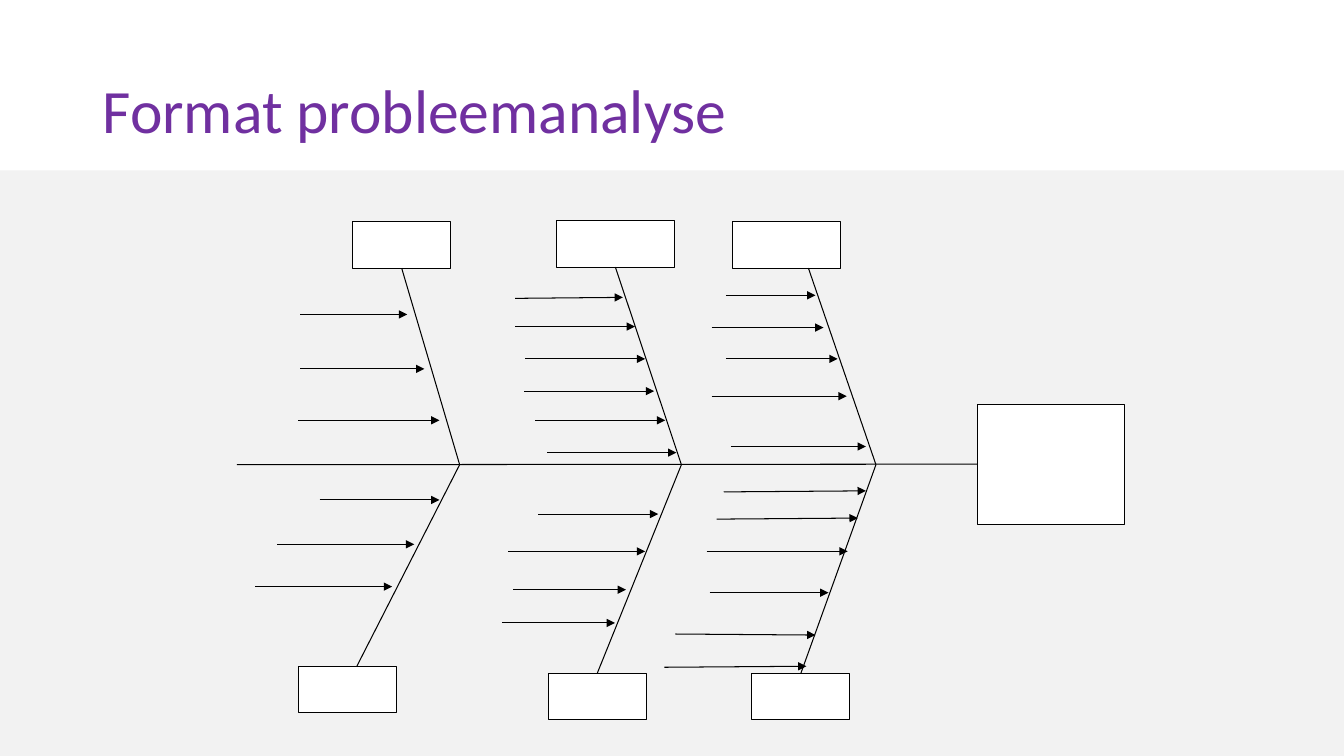
from dataclasses import dataclass

from lxml import etree
from pptx import Presentation
from pptx import util as u
from pptx.dml.color import RGBColor
from pptx.enum import shapes, text
from pptx.oxml.ns import qn


@dataclass(frozen=True)
class Theme:
    title: str = "7030A0"
    panel: str = "F2F2F2"
    box: str = "FFFFFF"
    line: str = "000000"
    font: str = "Calibri"
    title_size: int = 44
    line_width: float = 0.75


THEME = Theme()
CELL = 0.1  # inches per grid column and row
COLUMNS, ROWS = 133.33, 75
TOP, BOTTOM = 0, 2  # connection sites of a rectangle
LEFT = 1

# Fishbone, in grid cells from the diagram's corner
SPINE_ROW = 24.2
EFFECT = (73.5, 18.2, 14.6, 11.9)
CAUSE_HEIGHT = 4.6

# Each cause: box (column, row, width), column where the bone leaves the box
# (None for its middle), column where it meets the spine, and the arrows
# (start column, start row, end column, end row)
CAUSES = [
    ((11.5, 0.1, 9.7), None, 22.1,
     [(6.3, 9.3, 16.9, 9.3), (6.3, 14.7, 18.6, 14.7), (6.1, 19.8, 20.1, 19.8)]),
    ((31.7, 0, 11.7), None, 44.1,
     [(27.6, 7.7, 38.3, 7.6), (27.6, 10.5, 39.5, 10.5), (28.6, 13.7, 40.5, 13.7),
      (28.5, 16.9, 41.4, 16.9), (29.6, 19.8, 42.5, 19.8), (30.8, 23, 43.6, 23)]),
    ((49.2, 0.1, 10.7), 56.7, 63.4,
     [(48.5, 7.4, 57.4, 7.4), (47.1, 10.6, 58.2, 10.6), (48.5, 13.7, 59.6, 13.7),
      (47.1, 17.4, 60.5, 17.4), (49, 22.4, 62.4, 22.4)]),
    ((6.1, 44.2, 9.7), 11.9, 22.1,
     [(8.2, 27.7, 20.1, 27.7), (4, 32.1, 17.6, 32.1), (1.8, 36.3, 15.4, 36.3)]),
    ((30.9, 44.9, 9.7), None, 44.1,
     [(29.9, 29.1, 41.8, 29.1), (26.9, 32.8, 40.5, 32.8),
      (27.4, 36.6, 38.6, 36.6), (26.3, 39.9, 37.5, 39.9)]),
    ((51.1, 44.9, 9.7), None, 63.4,
     [(48.3, 26.9, 62.4, 26.8), (47.6, 29.6, 61.6, 29.5), (46.6, 32.8, 60.6, 32.8),
      (46.9, 36.9, 58.7, 36.9), (43.5, 41, 57.4, 41.1), (42.4, 44.3, 56.5, 44.2)]),
]


def cells(*counts):
    return [u.Inches(count * CELL) for count in counts]


def color(code):
    return RGBColor.from_string(code)


def add_text(slide, box, words, *, size, fill, font=THEME.font, spacing=0.9):
    shape = slide.shapes.add_textbox(*cells(*box))
    frame = shape.text_frame
    frame.word_wrap = True
    frame.vertical_anchor = text.MSO_ANCHOR.MIDDLE
    paragraph = frame.paragraphs[0]
    paragraph.text = words
    paragraph.line_spacing = spacing
    paragraph.font.size = u.Pt(size)
    paragraph.font.name = font
    paragraph.font.color.rgb = color(fill)
    return shape


def add_box(slide, box, fill, line=None):
    shape = slide.shapes.add_shape(shapes.MSO_SHAPE.RECTANGLE, *cells(*box))
    shape.shadow.inherit = False
    shape.fill.solid()
    shape.fill.fore_color.rgb = color(fill)
    if line:
        shape.line.color.rgb = color(line)
        shape.line.width = u.Pt(THEME.line_width)
    else:
        shape.line.fill.background()
    return shape


def add_line(slide, start, end, arrow=False):
    connector = slide.shapes.add_connector(
        shapes.MSO_CONNECTOR.STRAIGHT, *cells(*start, *end))
    connector.line.color.rgb = color(THEME.line)
    connector.line.width = u.Pt(THEME.line_width)
    properties = connector._element.spPr
    if arrow:
        etree.SubElement(properties.find(qn("a:ln")), qn("a:tailEnd"), type="triangle")
    etree.SubElement(properties, qn("a:effectLst"))
    return connector


def add_cause(slide, origin, box, foot, joint, arrows):
    left, top = origin
    column, row, width = box
    above = row < SPINE_ROW
    cause = add_box(slide, (left + column, top + row, width, CAUSE_HEIGHT),
                    THEME.box, THEME.line)

    # Bone from the spine to the cause
    foot_column = column + width / 2 if foot is None else foot
    foot_row = row + CAUSE_HEIGHT if above else row
    bone = add_line(slide, (left + joint, top + SPINE_ROW),
                    (left + foot_column, top + foot_row))
    if foot is None:
        bone.end_connect(cause, BOTTOM if above else TOP)

    # Arrows pointing at the bone
    for x1, y1, x2, y2 in arrows:
        add_line(slide, (left + x1, top + y1), (left + x2, top + y2), arrow=True)


def add_fishbone(slide, origin):
    left, top = origin
    column, row, width, height = EFFECT
    effect = add_box(slide, (left + column, top + row, width, height),
                     THEME.box, THEME.line)
    spine = add_line(slide, (left, top + SPINE_ROW), (left + column, top + SPINE_ROW))
    spine.end_connect(effect, LEFT)
    for cause in CAUSES:
        add_cause(slide, origin, *cause)


def main():
    presentation = Presentation()
    presentation.slide_width, presentation.slide_height = cells(COLUMNS, ROWS)
    slide = presentation.slides.add_slide(presentation.slide_layouts[6])

    # Grey panel and title
    add_box(slide, (0, 16.9, COLUMNS, ROWS - 16.9), THEME.panel)
    add_text(slide, (9.2, 4, 115, 14.5), "Format probleemanalyse",
             size=THEME.title_size, fill=THEME.title)

    # Diagram
    add_fishbone(slide, (23.5, 21.9))
    presentation.save("out.pptx")


if __name__ == "__main__":
    main()
